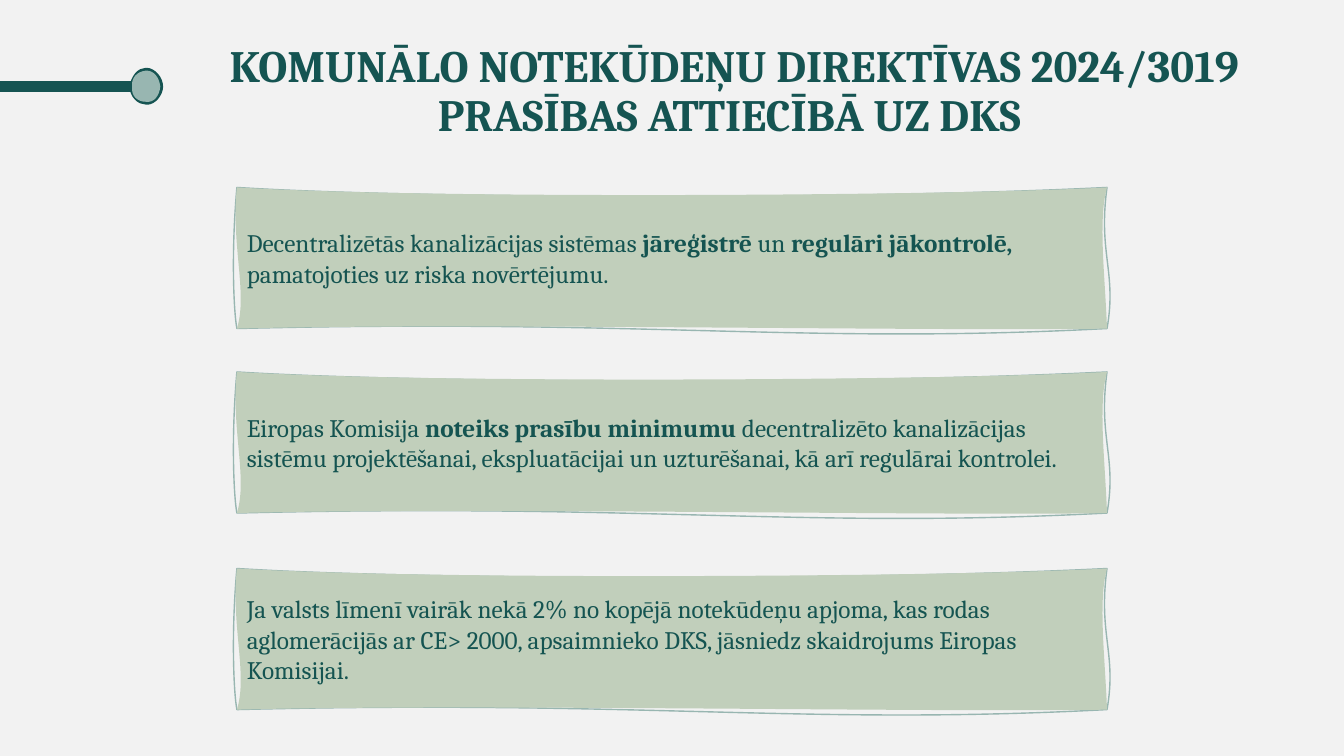
"""Build the slide on the wastewater directive's requirements for decentralised systems."""
from lxml import etree
from pptx import Presentation
from pptx import util as u
from pptx.dml.color import RGBColor
from pptx.enum import shapes, text
from pptx.oxml import ns

TEAL, BODY_TEAL, SAGE, GREY_GREEN = "155452", "155451", "C1CFBB", "98B6B1"
color = RGBColor.from_string

PANEL_EDGE = [
    [(1.73, 0.11), (5.98, 0.13), (8.63, 0)],
    [(8.54, 0.66), (8.73, 0.84), (8.63, 1.4)],
    [(5.59, 1.56), (4.06, 1.3), (0, 1.4)],
    [(-0.03, 1.25), (-0.06, 0.66), (0, 0)],
]
PANEL_FILL = [
    [(2.01, 0.12), (7.2, 0.08), (8.63, 0)],
    [(8.54, 0.32), (8.61, 0.87), (8.63, 1.4)],
    [(7.08, 1.43), (2.24, 1.34), (0, 1.4)],
    [(0.11, 1.05), (-0.06, 0.57), (0, 0)],
]
DOT_EDGE = [
    [(0.02, 0.07), (0.07, 0), (0.14, 0)],
    [(0.21, 0), (0.28, 0.08), (0.28, 0.16)],
    [(0.28, 0.23), (0.21, 0.32), (0.14, 0.31)],
    [(0.07, 0.31), (0.01, 0.25), (0, 0.16)],
]
DOT_FILL = [
    [(-0.01, 0.07), (0.05, 0.01), (0.14, 0)],
    [(0.22, 0), (0.27, 0.07), (0.28, 0.16)],
    [(0.27, 0.25), (0.22, 0.32), (0.14, 0.31)],
    [(0.05, 0.31), (-0.01, 0.25), (0, 0.16)],
]
PANELS = [
    (1.86, [
        ("Decentralizētās kanalizācijas sistēmas ", False),
        ("jāreģistrē ", True),
        ("un ", False),
        ("regulāri jākontrolē,", True),
        (" pamatojoties uz riska novērtējumu.", False),
    ]),
    (3.69, [
        ("Eiropas Komisija ", False),
        ("noteiks prasību minimumu ", True),
        ("decentralizēto kanalizācijas sistēmu projektēšanai, ekspluatācijai un "
         "uzturēšanai, kā arī regulārai kontrolei.", False),
    ]),
    (5.64, [
        ("Ja valsts līmenī vairāk nekā 2% no kopējā notekūdeņu apjoma, kas rodas "
         "aglomerācijās ar CE> 2000, apsaimnieko DKS, jāsniedz skaidrojums Eiropas "
         "Komisijai.", False),
    ]),
]


def draw_hand_shape(left, top, edge, inside, fill, line, width):
    """Draw one freeform with a curved outline and a separately curved fill."""
    anchors = [(u.Inches(left + x), u.Inches(top + y)) for _, _, (x, y) in edge]
    builder = slide.shapes.build_freeform(*anchors[-1])
    builder.add_line_segments(anchors[:-1], close=True)
    shape = builder.convert_to_shape()
    contours = shape._element.spPr.find(".//" + ns.qn("a:pathLst"))
    for contour in list(contours):
        contours.remove(contour)
    for curves, hidden in ((edge, {"fill": "none"}), (inside, {"stroke": "0"})):
        contour = etree.SubElement(
            contours, ns.qn("a:path"), w=str(shape.width), h=str(shape.height), **hidden)
        segments = [("a:moveTo", curves[-1][-1:])] + [("a:cubicBezTo", curve) for curve in curves]
        for tag, points in segments:
            segment = etree.SubElement(contour, ns.qn(tag))
            for x, y in points:
                etree.SubElement(segment, ns.qn("a:pt"), x=str(u.Inches(x)), y=str(u.Inches(y)))
        etree.SubElement(contour, ns.qn("a:close"))
    shape.shadow.inherit = False
    shape.fill.solid()
    shape.fill.fore_color.rgb = color(fill)
    shape.line.color.rgb = color(line)
    shape.line.width = u.Pt(width)
    return shape


def write_runs(shape, runs, size, ink, alignment):
    """Write one middle-anchored paragraph and return it."""
    frame = shape.text_frame
    frame.word_wrap = True
    frame.vertical_anchor = text.MSO_ANCHOR.MIDDLE
    paragraph = frame.paragraphs[0]
    paragraph.alignment = alignment
    for words, bold in runs:
        run = paragraph.add_run()
        run.text = words
        run.font.name = "Cambria"
        run.font.size = u.Pt(size)
        run.font.bold = bold
        run.font.color.rgb = color(ink)
    return paragraph


presentation = Presentation()
presentation.slide_width = u.Inches(13.33)
presentation.slide_height = u.Inches(7.5)
slide = presentation.slides.add_slide(presentation.slide_layouts[6])
slide.background.fill.solid()
slide.background.fill.fore_color.rgb = color("F2F2F2")

title = slide.shapes.add_textbox(u.Inches(1.99), u.Inches(0.19), u.Inches(10.59), u.Inches(1.45))
heading = write_runs(
    title, [("KOMUNĀLO NOTEKŪDEŅU DIREKTĪVAS 2024/3019 PRASĪBAS ATTIECĪBĀ UZ DKS ", True)],
    32, TEAL, text.PP_ALIGN.CENTER)
heading.line_spacing = 0.9

stem = slide.shapes.add_connector(
    shapes.MSO_CONNECTOR.STRAIGHT, u.Inches(-0.01), u.Inches(0.86), u.Inches(1.31), u.Inches(0.86))
stem.line.color.rgb = color(TEAL)
stem.line.width = u.Pt(8)
etree.SubElement(stem._element.spPr, ns.qn("a:effectLst"))

draw_hand_shape(1.31, 0.7, DOT_EDGE, DOT_FILL, GREY_GREEN, TEAL, 4)

for panel_top, runs in reversed(PANELS):
    panel = draw_hand_shape(2.35, panel_top, PANEL_EDGE, PANEL_FILL, SAGE, GREY_GREEN, 1)
    write_runs(panel, runs, 18, BODY_TEAL, text.PP_ALIGN.LEFT)

presentation.save("out.pptx")
